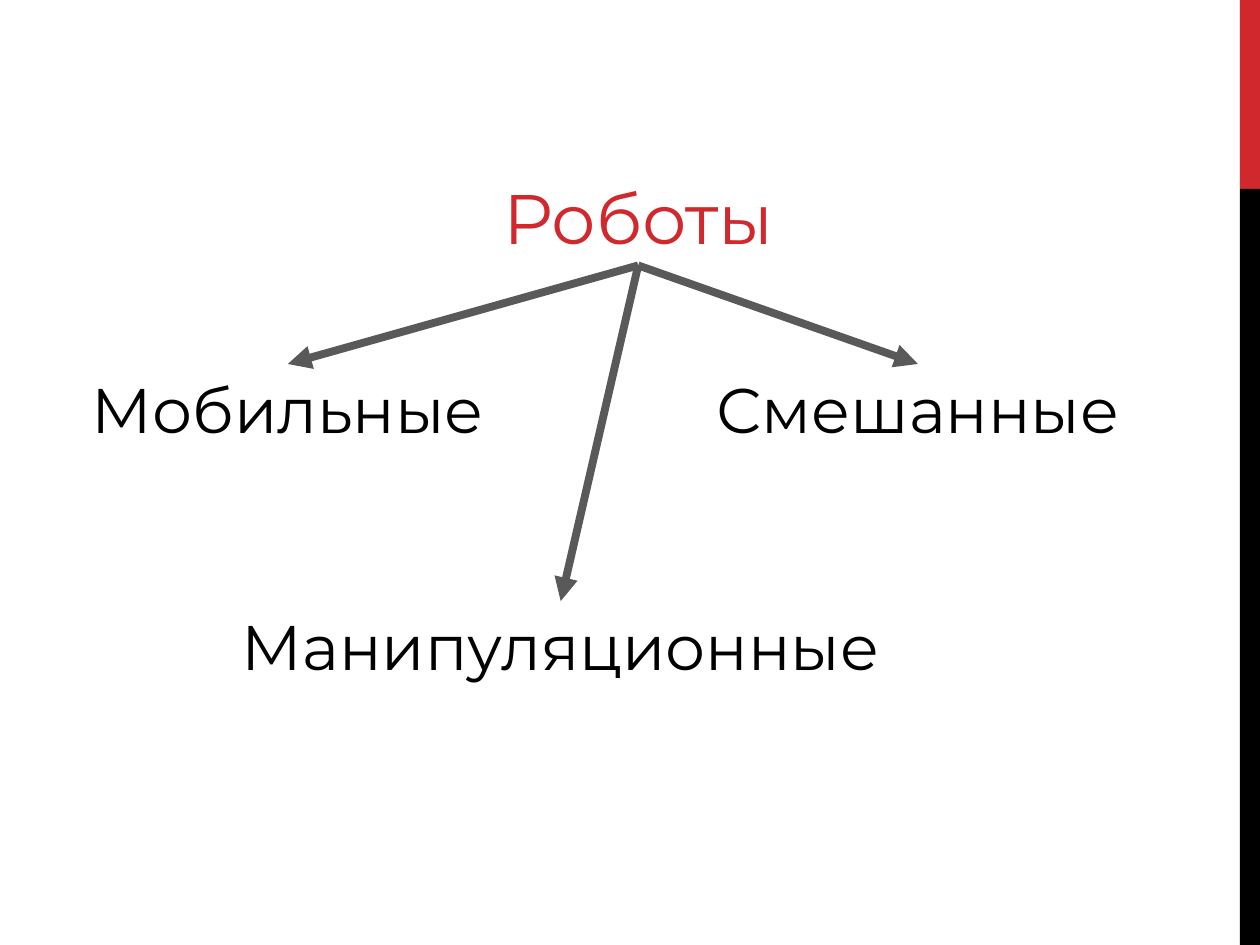
from pptx import Presentation
from pptx.dml.color import RGBColor
from pptx.enum import shapes, text
from pptx.oxml import ns, xmlchemy
from pptx.util import Pt

RED = RGBColor(0xD1, 0x28, 0x2E)
BLACK = RGBColor(0, 0, 0)
GRAY = RGBColor(0x59, 0x59, 0x59)
FONT = "Montserrat"
BOTTOM, TOP = 2, 0

# Wording, left, top, width
KINDS = [
    ("Мобильные", 14.4, 208, 300.2),
    ("Манипуляционные", 87.8, 343.5, 465.2),
    ("Смешанные", 377.3, 208, 294.5),
]


def add_bar(s, top, height, color):
    sp = s.shapes.add_shape(shapes.MSO_SHAPE.RECTANGLE,
                            Pt(708.5), Pt(top), Pt(11.5), Pt(height))
    sp.shadow.inherit = False
    sp.fill.solid()
    sp.fill.fore_color.rgb = color
    sp.line.fill.background()


def write_label(sp, wording, size, color):
    tf = sp.text_frame
    tf.word_wrap = True
    tf.auto_size = text.MSO_AUTO_SIZE.SHAPE_TO_FIT_TEXT
    tf.vertical_anchor = text.MSO_ANCHOR.TOP
    p = tf.paragraphs[0]
    p.alignment = text.PP_ALIGN.CENTER
    r = p.add_run()
    r.text = wording
    r.font.name = FONT
    r.font.size = Pt(size)
    r.font.color.rgb = color


def add_title(s, wording):
    sp = s.shapes.title
    sp.left, sp.top, sp.width, sp.height = Pt(254.2), Pt(96), Pt(221), Pt(55.7)
    write_label(sp, wording, 40, RED)
    return sp


def add_kind(s, wording, left, top, width):
    sp = s.shapes.add_textbox(Pt(left), Pt(top), Pt(width), Pt(51))
    write_label(sp, wording, 36, BLACK)
    return sp


def add_arrow(s, start, end):
    cx = s.shapes.add_connector(shapes.MSO_CONNECTOR.STRAIGHT, 0, 0, 0, 0)
    cx.begin_connect(start, BOTTOM)
    cx.end_connect(end, TOP)
    cx.line.width = Pt(4.5)
    cx.line.color.rgb = GRAY
    tail = xmlchemy.OxmlElement("a:tailEnd")
    tail.set("type", "triangle")
    sp_pr = cx.line.fill and cx._element.find(ns.qn("p:spPr"))
    sp_pr.find(ns.qn("a:ln")).append(tail)
    sp_pr.append(xmlchemy.OxmlElement("a:effectLst"))


def main():
    prs = Presentation()
    prs.slide_width, prs.slide_height = Pt(720), Pt(540)
    s = prs.slides.add_slide(prs.slide_layouts.get_by_name("Title Only"))
    add_bar(s, 0, 108, RED)
    add_bar(s, 108, 432, BLACK)
    title = add_title(s, "Роботы")
    labels = [add_kind(s, *kind) for kind in KINDS]
    for label in labels:
        add_arrow(s, title, label)
    prs.save("out.pptx")


if __name__ == "__main__":
    main()
